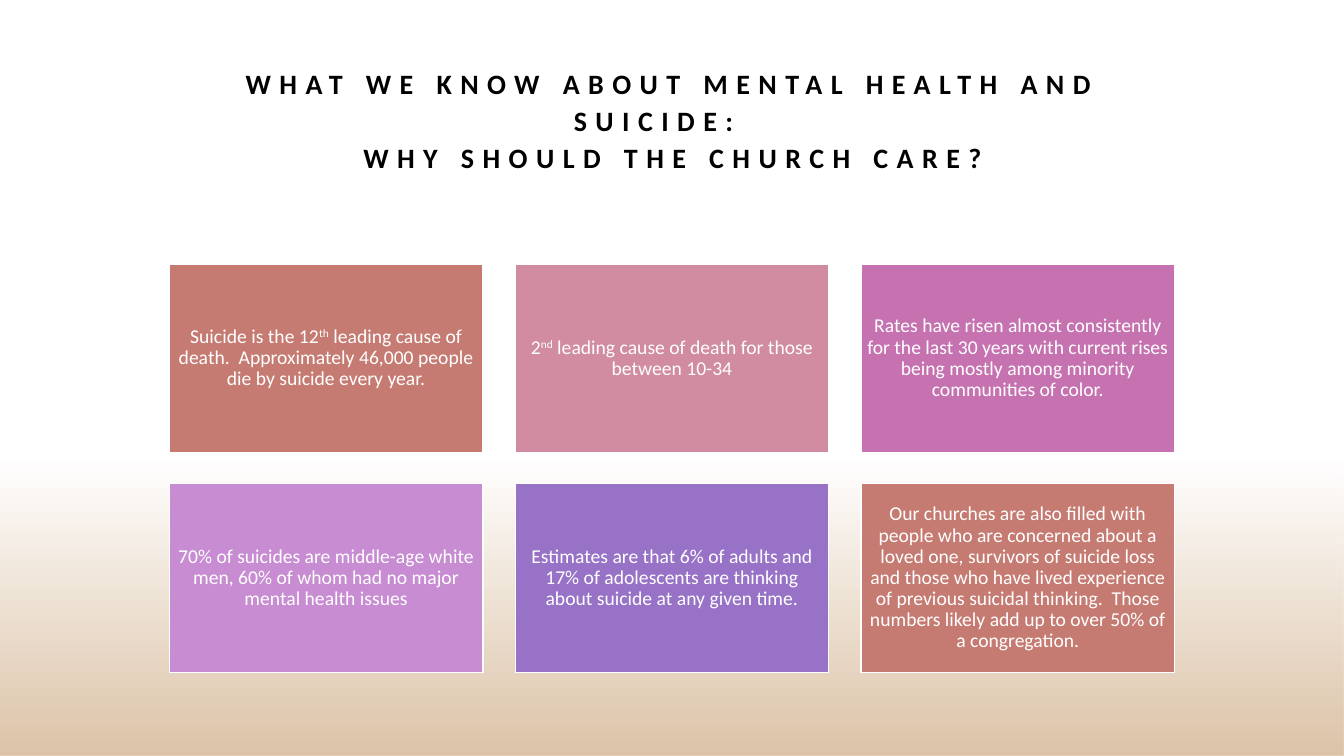
import pptx
import pptx.dml.color
import pptx.enum.shapes
import pptx.enum.text
import pptx.oxml
import pptx.oxml.ns
import pptx.util
from pptx.util import Inches

FONT = "Calibri"
SAND = "DCC3A7"
WHITE = "FFFFFF"
COLUMNS = 3
CARD_WIDTH, CARD_HEIGHT = 3.11, 1.87
COLUMN_STEP, ROW_STEP = 3.43, 2.18

# Text between carets is superscript.
CARDS = [
    ("C67B72", "Suicide is the 12^th^ leading cause of death.  Approximately "
               "46,000 people die by suicide every year."),
    ("D18CA1", "2^nd^ leading cause of death for those between 10-34"),
    ("C672B0", "Rates have risen almost consistently for the last 30 years with "
               "current rises being mostly among minority communities of color."),
    ("C78CD1", "70% of suicides are middle-age white men, 60% of whom had no "
               "major mental health issues"),
    ("9772C6", "Estimates are that 6% of adults and 17% of adolescents are "
               "thinking about suicide at any given time."),
    ("C67B72", "Our churches are also filled with people who are concerned about "
               "a loved one, survivors of suicide loss and those who have lived "
               "experience of previous suicidal thinking.  Those numbers likely "
               "add up to over 50% of a congregation."),
]


def color(hex_string):
    return pptx.dml.color.RGBColor.from_string(hex_string)


def add_rectangle(slide, left, top, width, height):
    shape = slide.shapes.add_shape(
        pptx.enum.shapes.MSO_SHAPE.RECTANGLE,
        Inches(left), Inches(top), Inches(width), Inches(height))
    shape.shadow.inherit = False
    return shape


def format_run(run, size, hex_string, bold=False):
    run.font.name = FONT
    run.font.size = pptx.util.Pt(size)
    run.font.bold = bold
    run.font.color.rgb = color(hex_string)


def add_fade(slide, left, top, width, height):
    """Add a band that goes from clear at the top to sand at the bottom."""
    band = add_rectangle(slide, left, top, width, height)
    band.line.fill.background()
    band.fill.gradient()
    band.fill.gradient_angle = 270
    for stop, position in zip(band.fill.gradient_stops, (0.14, 1)):
        stop.position = position
        stop.color.rgb = color(SAND)
    first_color = next(band.element.iter(pptx.oxml.ns.qn("a:srgbClr")))
    first_color.append(pptx.oxml.parse_xml(
        f'<a:alpha {pptx.oxml.ns.nsdecls("a")} val="0"/>'))


def add_title(slide, left, top, width, height):
    title = slide.shapes.add_textbox(
        Inches(left), Inches(top), Inches(width), Inches(height))
    frame = title.text_frame
    frame.word_wrap = True
    frame.vertical_anchor = pptx.enum.text.MSO_ANCHOR.BOTTOM
    frame.text = ("WHAT WE KNOW ABOUT MENTAL HEALTH AND SUICIDE:  \v"
                  "WHY SHOULD THE CHURCH CARE?")
    paragraph = frame.paragraphs[0]
    paragraph.alignment = pptx.enum.text.PP_ALIGN.CENTER
    paragraph.line_spacing = 1.1
    for run in paragraph.runs:
        format_run(run, 20, "000000", bold=True)
    for properties in title.element.iter(pptx.oxml.ns.qn("a:rPr")):
        properties.set("spc", "600")


def add_card(slide, left, top, fill, text):
    card = add_rectangle(slide, left, top, CARD_WIDTH, CARD_HEIGHT)
    card.fill.solid()
    card.fill.fore_color.rgb = color(fill)
    card.line.color.rgb = color(WHITE)
    card.line.width = pptx.util.Pt(1)
    frame = card.text_frame
    frame.word_wrap = True
    frame.vertical_anchor = pptx.enum.text.MSO_ANCHOR.MIDDLE
    frame.margin_left = frame.margin_right = Inches(0.06)
    frame.margin_top = frame.margin_bottom = Inches(0.06)
    paragraph = frame.paragraphs[0]
    paragraph.alignment = pptx.enum.text.PP_ALIGN.CENTER
    paragraph.line_spacing = 0.9
    for index, piece in enumerate(text.split("^")):
        run = paragraph.add_run()
        run.text = piece
        format_run(run, 14, WHITE)
        if index % 2:
            run.font._element.set("baseline", "30000")


def add_card_grid(slide, left, top):
    for index, (fill, text) in enumerate(CARDS):
        row, column = divmod(index, COLUMNS)
        add_card(slide, left + column * COLUMN_STEP, top + row * ROW_STEP,
                 fill, text)


def main():
    presentation = pptx.Presentation()
    presentation.slide_width = Inches(13.33)
    presentation.slide_height = Inches(7.5)
    slide = presentation.slides.add_slide(presentation.slide_layouts[6])
    slide.background.fill.solid()
    slide.background.fill.fore_color.rgb = color(WHITE)
    add_title(slide, 1.67, 0.83, 10, 0.95)
    add_fade(slide, 0, 4.09, 13.33, 3.41)
    add_card_grid(slide, 1.68, 2.62)
    presentation.save("out.pptx")


if __name__ == "__main__":
    main()
